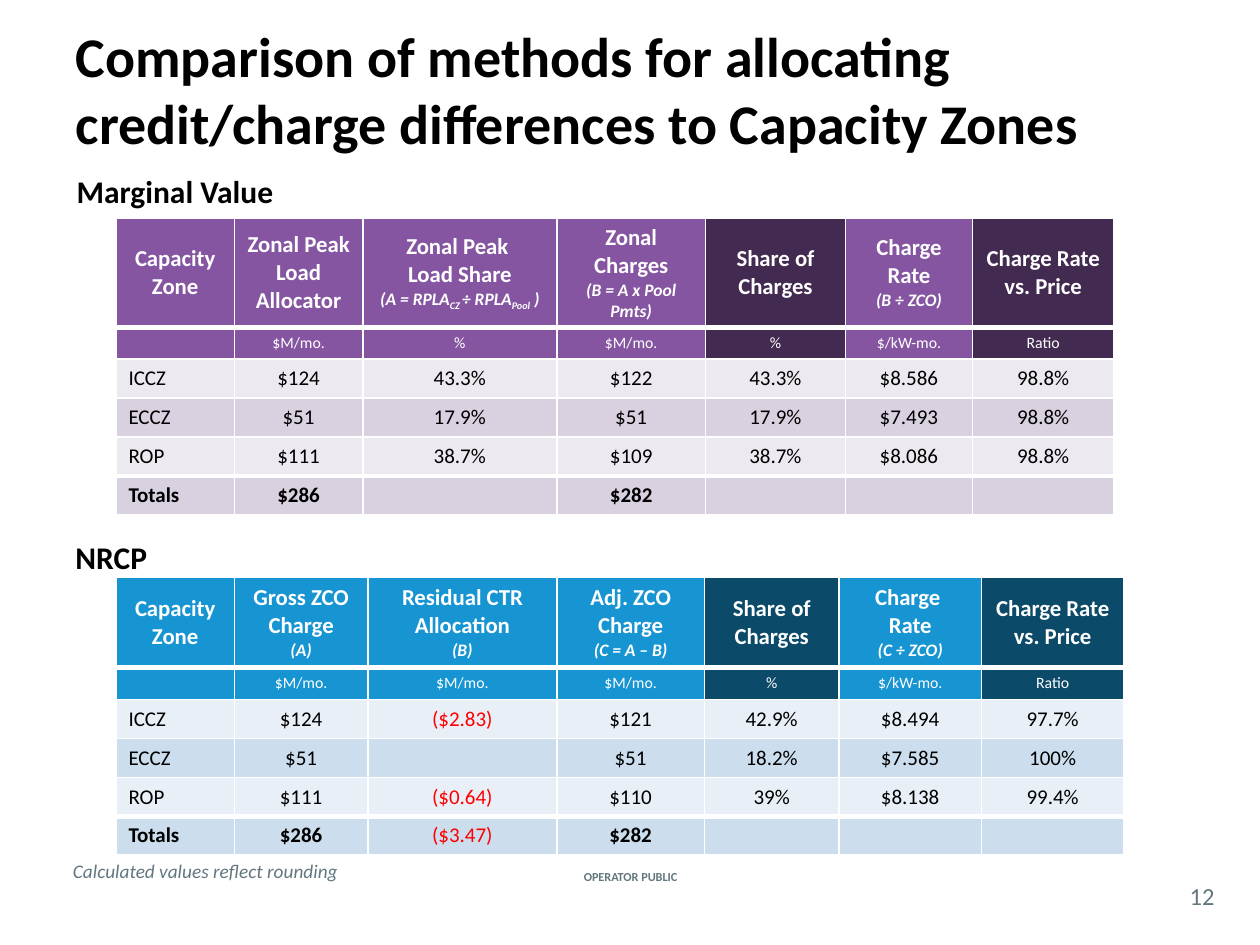
from lxml import etree
from pptx import Presentation
from pptx.dml.color import RGBColor
from pptx.enum.text import MSO_ANCHOR, PP_ALIGN
from pptx.oxml.ns import qn
from pptx.util import Inches, Pt

LEFT, CENTER = PP_ALIGN.LEFT, PP_ALIGN.CENTER
TOP, MIDDLE = MSO_ANCHOR.TOP, MSO_ANCHOR.MIDDLE

BLACK = RGBColor(0x00, 0x00, 0x00)
WHITE = RGBColor(0xFF, 0xFF, 0xFF)
RED = RGBColor(0xFF, 0x00, 0x00)
SLATE = RGBColor(0x62, 0x77, 0x7F)
PURPLE = RGBColor(0x85, 0x55, 0xA1)
DARK_PURPLE = RGBColor(0x43, 0x2A, 0x50)
PALE_PURPLE = RGBColor(0xED, 0xE9, 0xF0)
LIGHT_PURPLE = RGBColor(0xD9, 0xD1, 0xE0)
BLUE = RGBColor(0x17, 0x95, 0xD2)
DARK_BLUE = RGBColor(0x0C, 0x4A, 0x69)
PALE_BLUE = RGBColor(0xE8, 0xEF, 0xF7)
LIGHT_BLUE = RGBColor(0xCC, 0xDD, 0xEE)

FONT = "Calibri"
DARK_COLUMNS = (4, 6)
UNITS_ROW = 1

MARGINAL_HEADERS = [
    ["Capacity Zone"],
    ["Zonal Peak Load Allocator"],
    ["Zonal Peak ", "Load Share", ("(A = RPLA", "CZ ", "÷ RPLA", "Pool", " )")],
    ["Zonal Charges", "(B = A x Pool Pmts)"],
    ["Share of Charges"],
    ["Charge Rate", "(B ÷ ZCO)"],
    ["Charge Rate vs. Price"],
]
MARGINAL_ROWS = [
    ["", "$M/mo.", "%", "$M/mo.", "%", "$/kW-mo.", "Ratio"],
    ["ICCZ", "$124", "43.3%", "$122", "43.3%", "$8.586", "98.8%"],
    ["ECCZ", "$51", "17.9%", "$51", "17.9%", "$7.493", "98.8%"],
    ["ROP", "$111", "38.7%", "$109", "38.7%", "$8.086", "98.8%"],
    ["Totals", "$286", "", "$282", "", "", ""],
]
NRCP_HEADERS = [
    ["Capacity Zone"],
    ["Gross ZCO Charge", "(A)"],
    ["Residual CTR Allocation", "(B)"],
    ["Adj. ZCO Charge", "(C = A – B)"],
    ["Share of Charges"],
    ["Charge ", "Rate", "(C ÷ ZCO)"],
    ["Charge Rate vs. Price"],
]
NRCP_ROWS = [
    ["", "$M/mo.", "$M/mo.", "$M/mo.", "%", "$/kW-mo.", "Ratio"],
    ["ICCZ", "$124", "($2.83)", "$121", "42.9%", "$8.494", "97.7%"],
    ["ECCZ", "$51", "", "$51", "18.2%", "$7.585", "100%"],
    ["ROP", "$111", "($0.64)", "$110", "39%", "$8.138", "99.4%"],
    ["Totals", "$286", "($3.47)", "$282", "", "", ""],
]


def format_paragraph(paragraph, size, color, bold=False, italic=False, align=LEFT):
    paragraph.alignment = align
    font = paragraph.font
    font.name, font.size = FONT, Pt(size)
    font.bold, font.italic = bold, italic
    font.color.rgb = color


def add_label(slide, text, left, top, width, height, size, color,
              anchor=TOP, margin=None, **style):
    frame = slide.shapes.add_textbox(
        Inches(left), Inches(top), Inches(width), Inches(height)).text_frame
    frame.word_wrap = True
    frame.vertical_anchor = anchor
    if margin is not None:
        frame.margin_left = frame.margin_right = Inches(margin)
        frame.margin_top = frame.margin_bottom = Inches(margin)
    frame.text = text
    format_paragraph(frame.paragraphs[0], size, color, **style)


def style_cell(cell, fill, top_width, bottom_width):
    properties = cell._tc.get_or_add_tcPr()
    widths = {"a:lnL": 1, "a:lnR": 1, "a:lnT": top_width, "a:lnB": bottom_width}
    for side, width in widths.items():
        line = etree.SubElement(properties, qn(side), w=str(Pt(width)))
        solid = etree.SubElement(line, qn("a:solidFill"))
        etree.SubElement(solid, qn("a:srgbClr"), val=str(WHITE))
    cell.fill.solid()
    cell.fill.fore_color.rgb = fill
    cell.vertical_anchor = MIDDLE


def write_header(cell, lines):
    frame = cell.text_frame
    for index, line in enumerate(lines):
        paragraph = frame.add_paragraph() if index else frame.paragraphs[0]
        pieces = (line,) if isinstance(line, str) else line
        for position, piece in enumerate(pieces):
            run = paragraph.add_run()
            run.text = piece
            if position % 2:
                run._r.get_or_add_rPr().set("baseline", "-25000")
        formula = pieces[0].startswith("(")
        format_paragraph(paragraph, 10 if formula else 13, WHITE,
                         bold=True, italic=formula, align=CENTER)


def write_value(cell, text, size, color, bold, align):
    paragraph = cell.text_frame.paragraphs[0]
    negative = text.startswith("(")
    if text:
        paragraph.add_run().text = text
    format_paragraph(paragraph, size, RED if negative else color,
                     bold=bold and not negative, align=align)
    if not text:
        etree.SubElement(paragraph._p, qn("a:endParaRPr"), sz=str(size * 100))


def add_zone_table(slide, top, widths, heights, headers, rows, palette, totals_rule):
    main, dark, pale, light = palette
    table = slide.shapes.add_table(
        len(heights), len(widths), Inches(0.92), Inches(top),
        Inches(sum(widths)), Inches(sum(heights))).table
    table.horz_banding = False
    for column, width in zip(table.columns, widths):
        column.width = Inches(width)
    for row, height in zip(table.rows, heights):
        row.height = Inches(height)

    last = len(heights) - 1
    rules = [1, 3] + [1] * (last - 2) + [totals_rule, 1]
    for r in range(len(heights)):
        for c in range(len(widths)):
            cell = table.cell(r, c)
            if r <= UNITS_ROW:
                fill = dark if c in DARK_COLUMNS else main
            else:
                fill = light if r % 2 else pale
            style_cell(cell, fill, rules[r], rules[r + 1])
            if r == 0:
                write_header(cell, headers[c])
            elif r == UNITS_ROW:
                write_value(cell, rows[0][c], 9, WHITE, False, CENTER)
            else:
                write_value(cell, rows[r - 1][c], 12, BLACK, r == last,
                            CENTER if c else LEFT)


def add_title(slide, text):
    title = slide.shapes.title
    title.left, title.top = Inches(0.5), Inches(0.08)
    title.width, title.height = Inches(9), Inches(1.25)
    title.text_frame.text = text
    title.text_frame.vertical_anchor = MIDDLE
    format_paragraph(title.text_frame.paragraphs[0], 32, BLACK, bold=True)


def main():
    deck = Presentation()
    deck.slide_width, deck.slide_height = Inches(10), Inches(7.5)
    slide = deck.slides.add_slide(deck.slide_layouts[5])

    add_title(slide, "Comparison of methods for allocating "
                     "credit/charge differences to Capacity Zones")
    add_label(slide, "Marginal Value", 0.51, 1.32, 2.84, 0.4, 18, BLACK, bold=True)
    add_zone_table(slide, 1.73, [0.94, 1.02, 1.54, 1.18, 1.11, 1.01, 1.12],
                   [0.74, 0.25, 0.31, 0.31, 0.31, 0.31],
                   MARGINAL_HEADERS, MARGINAL_ROWS,
                   (PURPLE, DARK_PURPLE, PALE_PURPLE, LIGHT_PURPLE), 2.25)
    add_label(slide, "NRCP", 0.5, 4.22, 2.84, 0.33, 18, BLACK, bold=True)
    add_zone_table(slide, 4.58, [0.94, 1.06, 1.5, 1.17, 1.07, 1.13, 1.13],
                   [0.72, 0.24, 0.31, 0.31, 0.31, 0.29],
                   NRCP_HEADERS, NRCP_ROWS,
                   (BLUE, DARK_BLUE, PALE_BLUE, LIGHT_BLUE), 3)
    add_label(slide, "Calculated values reflect rounding", 0.48, 6.77, 2.79, 0.29,
              11, SLATE, italic=True)
    add_label(slide, "OPERATOR PUBLIC", 4.27, 6.87, 1.47, 0.17, 7, SLATE,
              anchor=MIDDLE, margin=0, bold=True, align=CENTER)
    add_label(slide, "12", 9.33, 6.96, 0.42, 0.29, 14, SLATE,
              anchor=MIDDLE, margin=0, align=CENTER)
    deck.save("out.pptx")


if __name__ == "__main__":
    main()
